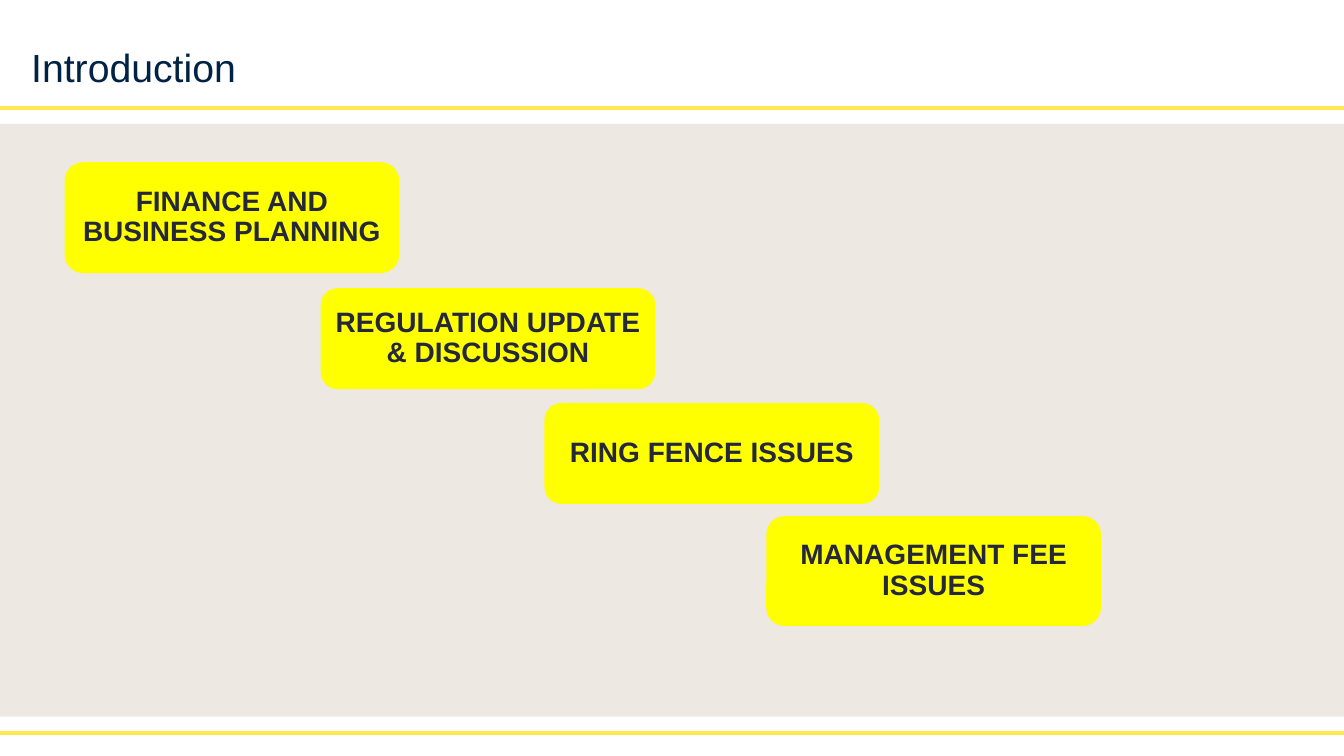
from dataclasses import dataclass
from typing import Any

from lxml.etree import SubElement
from pptx import Presentation
from pptx.dml.color import RGBColor
from pptx.enum.shapes import MSO_CONNECTOR, MSO_SHAPE
from pptx.enum.text import MSO_ANCHOR, MSO_AUTO_SIZE, PP_ALIGN
from pptx.oxml.ns import qn
from pptx.shapes.autoshape import Shape
from pptx.slide import Slide
from pptx.util import Inches, Length, Pt


@dataclass(frozen=True)
class Theme:
    font: str = "Arial"
    navy: RGBColor = RGBColor(0x00, 0x22, 0x44)
    ink: RGBColor = RGBColor(0x25, 0x27, 0x3A)
    panel: RGBColor = RGBColor(0xEE, 0xE8, 0xE3)
    rule: RGBColor = RGBColor(0xFF, 0xE8, 0x50)
    topic: RGBColor = RGBColor(0xFF, 0xFF, 0x00)
    title_size: Length = Pt(28)
    topic_size: Length = Pt(20)
    rule_width: Length = Pt(3)


@dataclass(frozen=True)
class Topic:
    text: str
    column: float
    row: float
    rows: float


THEME = Theme()
CELLS_PER_INCH = 10
COLUMNS = 133.3
ROWS = 75
TOPIC_COLUMNS = 33.2
TOPICS = (
    Topic("FINANCE AND BUSINESS PLANNING", 6.4, 16.1, 11),
    Topic("REGULATION UPDATE & DISCUSSION", 31.8, 28.6, 10),
    Topic("RING FENCE ISSUES", 54, 40, 10),
    Topic("MANAGEMENT FEE ISSUES", 76, 51.2, 10.9),
)


def grid(cells: float) -> Length:
    return Inches(cells / CELLS_PER_INCH)


def apply_format(target: Any, values: dict[str, Any]) -> None:
    for name, value in values.items():
        setattr(target, name, value)


def write_text(shape: Shape, text: str, frame: dict[str, Any],
               paragraph_format: dict[str, Any], font: dict[str, Any],
               color: RGBColor) -> None:
    text_frame = shape.text_frame
    text_frame.text = text
    paragraph = text_frame.paragraphs[0]
    apply_format(text_frame, {"word_wrap": True, "auto_size": MSO_AUTO_SIZE.NONE} | frame)
    apply_format(paragraph, {"line_spacing": 0.9} | paragraph_format)
    run_font = paragraph.runs[0].font
    apply_format(run_font, {"name": THEME.font} | font)
    run_font.color.rgb = color


def add_block(slide: Slide, kind: MSO_SHAPE, column: float, row: float,
              columns: float, rows: float, fill: RGBColor) -> Shape:
    shape = slide.shapes.add_shape(kind, grid(column), grid(row), grid(columns), grid(rows))
    shape.shadow.inherit = False
    shape.fill.solid()
    shape.fill.fore_color.rgb = fill
    shape.line.fill.background()
    return shape


def add_rule(slide: Slide, row: float) -> None:
    rule = slide.shapes.add_connector(
        MSO_CONNECTOR.STRAIGHT, 0, grid(row), grid(COLUMNS), grid(row))
    rule.line.color.rgb = THEME.rule
    rule.line.width = THEME.rule_width
    SubElement(rule._element.spPr, qn("a:effectLst"))


def add_title(slide: Slide, text: str) -> None:
    title = slide.shapes.title
    apply_format(title, {"left": grid(2.1), "top": grid(4.5),
                         "width": grid(122.4), "height": grid(5)})
    write_text(title, text, {"vertical_anchor": MSO_ANCHOR.BOTTOM},
               {"alignment": PP_ALIGN.LEFT}, {"size": THEME.title_size}, THEME.navy)


def add_topic(slide: Slide, topic: Topic) -> None:
    box = add_block(slide, MSO_SHAPE.ROUNDED_RECTANGLE, topic.column, topic.row,
                    TOPIC_COLUMNS, topic.rows, THEME.topic)
    write_text(box, topic.text,
               {"vertical_anchor": MSO_ANCHOR.MIDDLE,
                "margin_left": grid(0.5), "margin_right": grid(0.5)},
               {"alignment": PP_ALIGN.CENTER, "space_after": Pt(6)},
               {"size": THEME.topic_size, "bold": True}, THEME.ink)


def main() -> None:
    presentation = Presentation()
    apply_format(presentation, {"slide_width": grid(COLUMNS), "slide_height": grid(ROWS)})
    slide = presentation.slides.add_slide(presentation.slide_layouts.get_by_name("Title Only"))
    add_block(slide, MSO_SHAPE.RECTANGLE, 0, 12.3, COLUMNS, 58.8, THEME.panel)
    for row in (10.7, 72.7):
        add_rule(slide, row)
    add_title(slide, "Introduction")
    for topic in TOPICS:
        add_topic(slide, topic)
    presentation.save("out.pptx")


if __name__ == "__main__":
    main()
